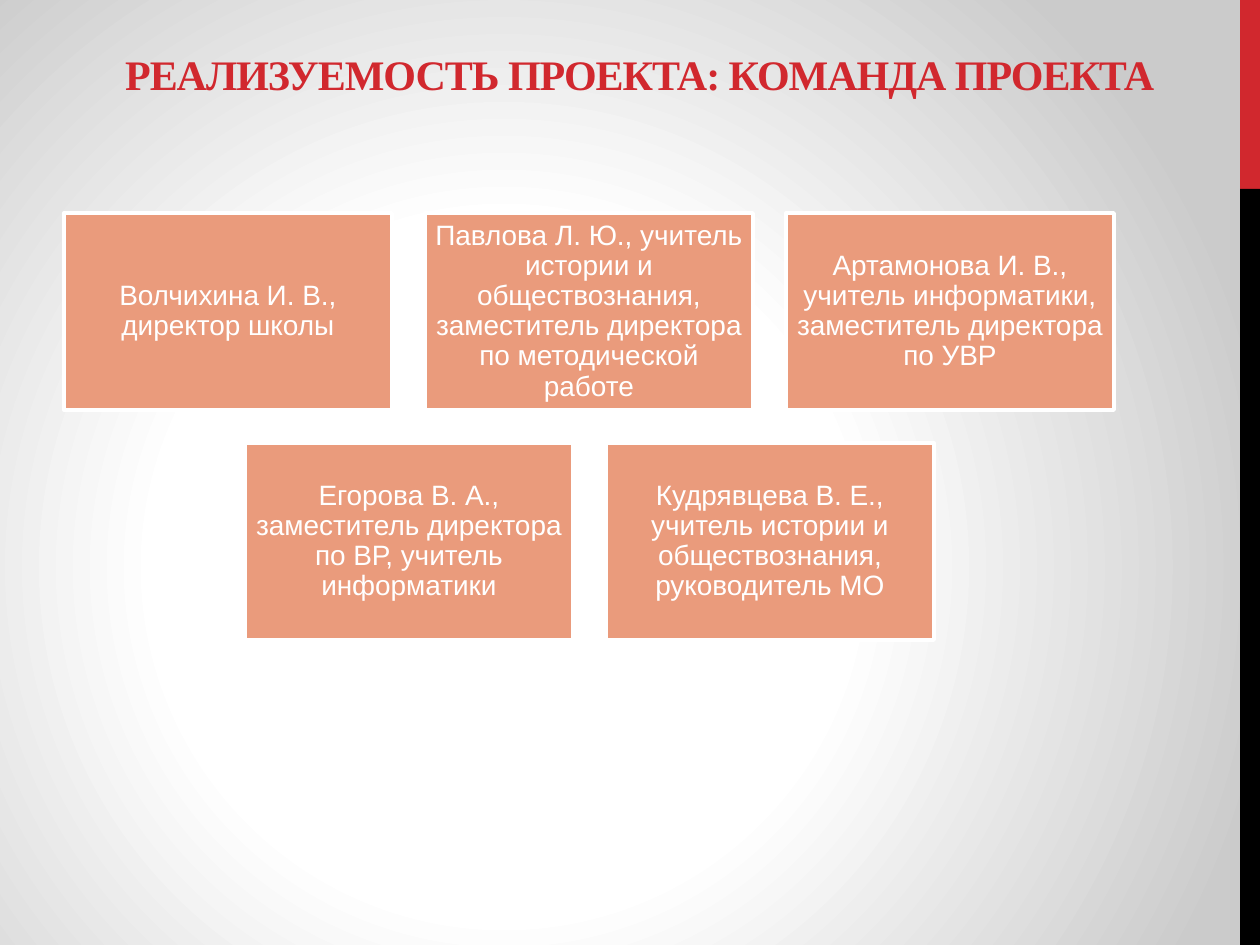
from lxml import etree
from pptx import Presentation
from pptx.dml.color import RGBColor
from pptx.enum.shapes import MSO_SHAPE
from pptx.enum.text import MSO_ANCHOR, PP_ALIGN
from pptx.oxml.ns import qn
from pptx.util import Emu, Pt

RECTANGLE = MSO_SHAPE.RECTANGLE
MIDDLE, BOTTOM = MSO_ANCHOR.MIDDLE, MSO_ANCHOR.BOTTOM
CENTER = PP_ALIGN.CENTER

THEME = {
    "red": "D1282E",
    "black": "000000",
    "white": "FFFFFF",
    "card": "EA9B7C",
    "gradient": [(0, "FFFFFF"), (44, "FFFFFF"), (100, "CBCBCB")],
    "title_font": "Times New Roman",
    "title_size": 24,
    "card_font": "Arial",
    "card_size": 16,
}
SCALE = 914400 / 126


def px(length):
    return Emu(round(length * SCALE))


def add_rectangle(left, top, width, height, color):
    shape = slide.shapes.add_shape(RECTANGLE, px(left), px(top), px(width), px(height))
    shape.shadow.inherit = False
    shape.fill.solid()
    shape.fill.fore_color.rgb = RGBColor.from_string(color)
    shape.line.fill.background()
    return shape


presentation = Presentation()
presentation.slide_width = px(1260)
presentation.slide_height = px(945)
slide = presentation.slides.add_slide(presentation.slide_layouts[6])

slide.background.fill.gradient()
gradient = slide.element.find(".//" + qn("a:gradFill"))
for child in list(gradient):
    gradient.remove(child)
stops = etree.SubElement(gradient, qn("a:gsLst"))
for position, color in THEME["gradient"]:
    stop = etree.SubElement(stops, qn("a:gs"), pos=str(position * 1000))
    etree.SubElement(stop, qn("a:srgbClr"), val=color)
gradient_path = etree.SubElement(gradient, qn("a:path"))
gradient_path.set("path", "circle")
etree.SubElement(gradient_path, qn("a:fillToRect"), l="40000", t="60000", r="60000", b="40000")

add_rectangle(1240, 0, 20, 189, THEME["red"])
add_rectangle(1240, 189, 20, 756, THEME["black"])

title = slide.shapes.add_textbox(px(63), px(21), px(1153), px(84))
title_frame = title.text_frame
title_frame.word_wrap = True
title_frame.vertical_anchor = BOTTOM
title_frame.text = "РЕАЛИЗУЕМОСТЬ ПРОЕКТА: КОМАНДА ПРОЕКТА"
paragraph = title_frame.paragraphs[0]
paragraph.alignment = CENTER
font = paragraph.runs[0].font
font.name = THEME["title_font"]
font.size = Pt(THEME["title_size"])
font.bold = True
font.color.rgb = RGBColor.from_string(THEME["red"])
paragraph.runs[0].font._element.set("spc", "-60")

TEAM_ROWS = [
    [
        "Волчихина И. В., директор школы",
        "Павлова Л. Ю., учитель истории и обществознания, заместитель директора по методической работе",
        "Артамонова И. В., учитель информатики, заместитель директора по УВР",
    ],
    [
        "Егорова В. А., заместитель директора по ВР, учитель информатики",
        "Кудрявцева В. Е., учитель истории и обществознания, руководитель МО",
    ],
]
CARD_WIDTH, CARD_HEIGHT, GAP = 328, 197, 33
TEAM_CENTER, TEAM_TOP, INSET = 589, 213, 9

for row, members in enumerate(TEAM_ROWS):
    row_width = len(members) * (CARD_WIDTH + GAP) - GAP
    row_left = TEAM_CENTER - row_width // 2
    top = TEAM_TOP + row * (CARD_HEIGHT + GAP)
    for column, member in enumerate(members):
        left = row_left + column * (CARD_WIDTH + GAP)
        card = add_rectangle(left, top, CARD_WIDTH, CARD_HEIGHT, THEME["card"])
        card.line.color.rgb = RGBColor.from_string(THEME["white"])
        card.line.width = Pt(2.25)
        frame = card.text_frame
        frame.word_wrap = True
        frame.vertical_anchor = MIDDLE
        frame.margin_left = frame.margin_right = px(INSET)
        frame.margin_top = frame.margin_bottom = px(INSET)
        frame.text = member
        paragraph = frame.paragraphs[0]
        paragraph.alignment = CENTER
        paragraph.line_spacing = 0.9
        font = paragraph.runs[0].font
        font.name = THEME["card_font"]
        font.size = Pt(THEME["card_size"])
        font.color.rgb = RGBColor.from_string(THEME["white"])

presentation.save("out.pptx")
